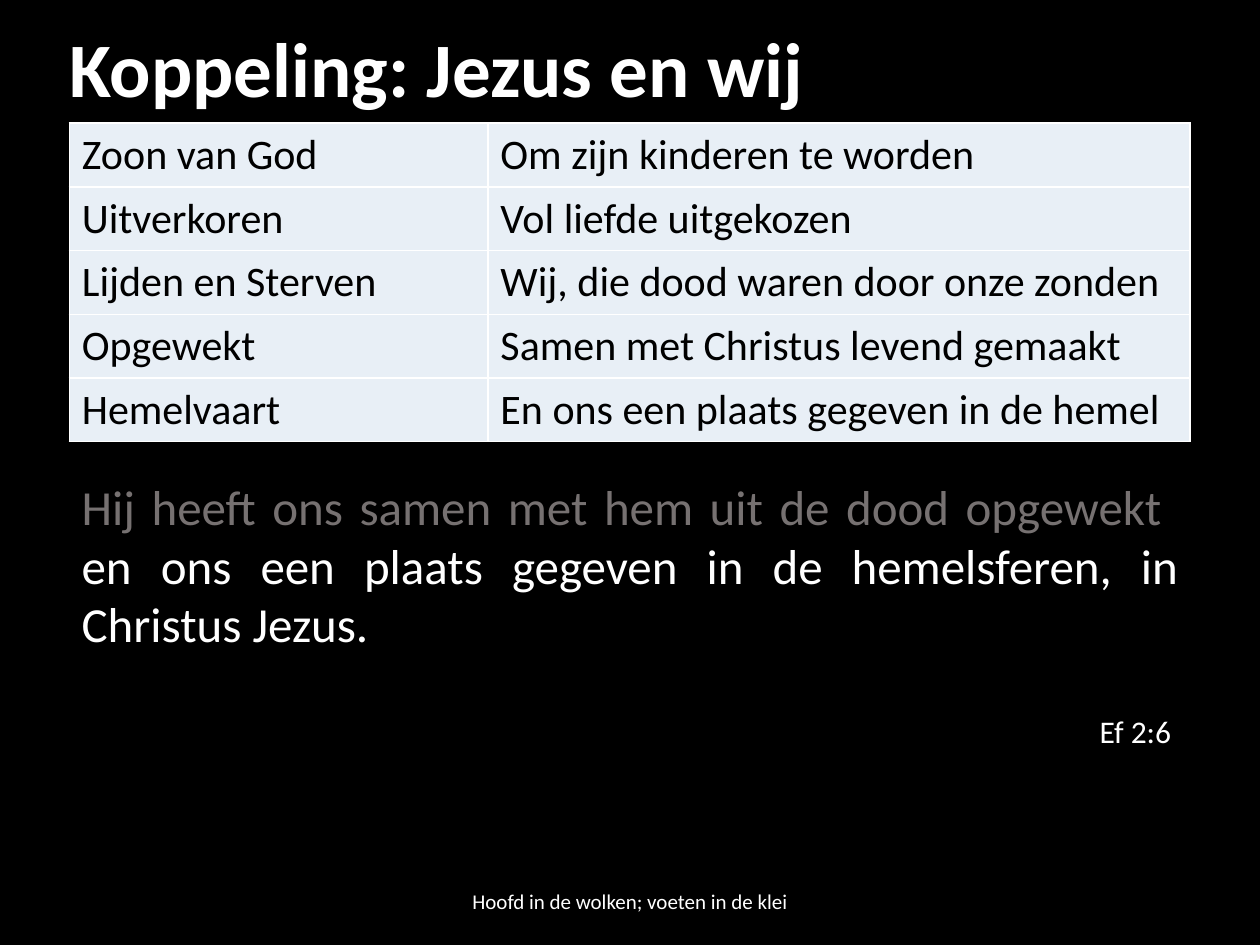
from lxml import etree
from pptx import Presentation
from pptx.dml.color import RGBColor
from pptx.enum import text
from pptx.oxml import ns
from pptx.util import Pt

BLACK = RGBColor(0x00, 0x00, 0x00)
WHITE = RGBColor(0xFF, 0xFF, 0xFF)
GREY = RGBColor(0x76, 0x71, 0x71)
PALE_BLUE = RGBColor(0xE8, 0xEF, 0xF6)
ALIGN = text.PP_ALIGN


def add_run(p, words, size, color, bold=False):
    r = p.add_run()
    r.text = words
    r.font.name = "Calibri"
    r.font.size = Pt(size)
    r.font.bold = bold
    r.font.color.rgb = color


def add_box(left, top, width, height, anchor):
    """Add a wrapping text box and return its text frame."""
    sp = s.shapes.add_textbox(Pt(left), Pt(top), Pt(width), Pt(height))
    tf = sp.text_frame
    tf.word_wrap = True
    tf.vertical_anchor = anchor
    return tf


prs = Presentation()
prs.slide_width, prs.slide_height = Pt(720), Pt(540)
s = prs.slides.add_slide(prs.slide_layouts[6])
s.background.fill.solid()
s.background.fill.fore_color.rgb = BLACK

# Title
tf = add_box(32.4, 13.7, 638, 56, text.MSO_ANCHOR.MIDDLE)
p = tf.paragraphs[0]
p.line_spacing = 0.9
add_run(p, "Koppeling: Jezus en wij", 44, WHITE, bold=True)

# Table linking Jesus to us
ROWS = [
    ("Zoon van God", "Om zijn kinderen te worden"),
    ("Uitverkoren", "Vol liefde uitgekozen"),
    ("Lijden en Sterven", "Wij, die dood waren door onze zonden"),
    ("Opgewekt", "Samen met Christus levend gemaakt"),
    ("Hemelvaart", "En ons een plaats gegeven in de hemel"),
]
ROW_HEIGHT = 36.4
tbl = s.shapes.add_table(len(ROWS), 2, Pt(39.6), Pt(70.4), Pt(640.4),
                         Pt(ROW_HEIGHT * len(ROWS))).table
tbl.first_row = tbl.horz_banding = False
for col, width in zip(tbl.columns, (239.2, 401.2)):
    col.width = Pt(width)
for i, row in enumerate(ROWS):
    tbl.rows[i].height = Pt(ROW_HEIGHT)
    for j, words in enumerate(row):
        cell = tbl.cell(i, j)
        add_run(cell.text_frame.paragraphs[0], words, 24, BLACK)
        tcPr = cell._tc.get_or_add_tcPr()
        for side in ("a:lnL", "a:lnR", "a:lnT", "a:lnB"):
            ln = etree.SubElement(tcPr, ns.qn(side), w=str(Pt(1)))
            line_fill = etree.SubElement(ln, ns.qn("a:solidFill"))
            etree.SubElement(line_fill, ns.qn("a:srgbClr"), val=str(WHITE))
        cell.fill.solid()
        cell.fill.fore_color.rgb = PALE_BLUE

# Footer
tf = add_box(238.3, 500.4, 243.4, 28.8, text.MSO_ANCHOR.MIDDLE)
p = tf.paragraphs[0]
p.alignment = ALIGN.CENTER
add_run(p, "Hoofd in de wolken; voeten in de klei", 12, WHITE)

# Bible verse with its reference
tf = add_box(39.6, 268.6, 640.8, 164.9, text.MSO_ANCHOR.TOP)
p = tf.paragraphs[0]
p.alignment = ALIGN.JUSTIFY
add_run(p, "Hij heeft ons samen met hem uit de dood opgewekt ", 28, GREY)
p.add_line_break()
add_run(p, "en ons een plaats gegeven in de hemelsferen, in Christus Jezus.", 28, WHITE)
p = tf.add_paragraph()
p.alignment = ALIGN.RIGHT
p.space_before = Pt(34)
add_run(p, "Ef 2:6 ", 18, WHITE)

prs.save("out.pptx")
